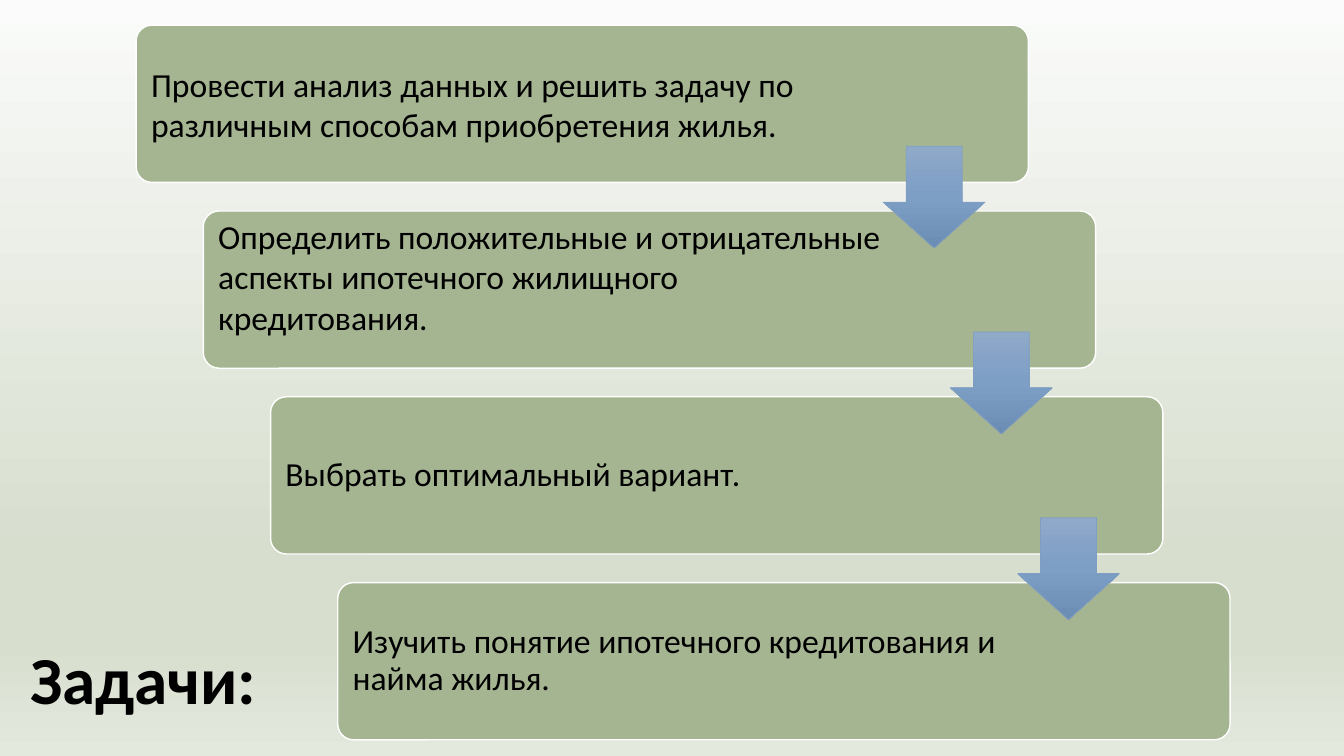
from lxml import etree
from pptx import Presentation
from pptx.dml.color import RGBColor
from pptx.enum.shapes import MSO_SHAPE
from pptx.enum.text import MSO_ANCHOR
from pptx.oxml.ns import qn
from pptx.util import Inches, Pt

ROUND = MSO_SHAPE.ROUNDED_RECTANGLE
ARROW = MSO_SHAPE.DOWN_ARROW
TOP, MIDDLE = MSO_ANCHOR.TOP, MSO_ANCHOR.MIDDLE

BLACK = RGBColor(0x00, 0x00, 0x00)
WHITE = RGBColor(0xFF, 0xFF, 0xFF)
GREEN = RGBColor(0xA5, 0xB5, 0x92)
BLUE = RGBColor(0x80, 0x9E, 0xC2)
PALE = RGBColor(0xFA, 0xFB, 0xFA)
SAGE = RGBColor(0xD7, 0xDE, 0xCE)
MIST = RGBColor(0xE4, 0xE9, 0xDE)
SKY = RGBColor(0x8F, 0xA9, 0xC9)
STEEL = RGBColor(0x7D, 0x9E, 0xC5)
DEEP = RGBColor(0x6B, 0x8C, 0xB3)

BACK_STOPS = [(0, PALE), (74, SAGE), (85, SAGE), (100, MIST)]
ARROW_STOPS = [(0, SKY), (50, STEEL), (100, DEEP)]

# Each task: text, then its format
TASKS = [
    ("Провести анализ данных и решить задачу по различным способам "
     "приобретения жилья.", {}),
    ("Определить положительные и отрицательные аспекты ипотечного "
     "жилищного кредитования.", {"anchor": TOP, "inset": (0.1, 0)}),
    ("Выбрать оптимальный вариант.", {"spacing": 0.9}),
    ("Изучить понятие ипотечного кредитования и найма жилья.",
     {"spacing": 0.9}),
]

# Staircase of cards
LEFT, UP = 1.35, 0.25
STEP_X, STEP_Y = 2 / 3, 5.53 / 3
CARD_W, CARD_H = 8.85, 1.56
PAD = 0.05
ARROW_X, ARROW_Y, ARROW_SIZE = 7.41, 1.2, 1.01


def shade(fill, owner, stops):
    """Fill from top to bottom with any number of colour stops."""
    fill.gradient()
    fill.gradient_angle = 270
    group = next(owner.iter(qn("a:gsLst")))
    for old in list(group):
        group.remove(old)
    for place, color in stops:
        stop = etree.SubElement(group, qn("a:gs"), pos=str(place * 1000))
        etree.SubElement(stop, qn("a:srgbClr"), val=str(color))


def add_text(slide, box, text, size=24, bold=False, anchor=MIDDLE,
             spacing=1.0, inset=(0.1, 0.1)):
    frame = slide.shapes.add_textbox(*map(Inches, box)).text_frame
    frame.word_wrap = True
    frame.vertical_anchor = anchor
    frame.margin_left = frame.margin_right = Inches(inset[0])
    frame.margin_top = frame.margin_bottom = Inches(inset[1])
    para = frame.paragraphs[0]
    para.line_spacing = spacing
    run = para.add_run()
    run.text = text
    run.font.name = "Calibri"
    run.font.size = Pt(size)
    run.font.bold = bold
    run.font.color.rgb = BLACK


def add_form(slide, kind, box, adjust, line, width):
    form = slide.shapes.add_shape(kind, *map(Inches, box))
    form.shadow.inherit = False
    for index, value in enumerate(adjust):
        form.adjustments[index] = value
    form.line.color.rgb = line
    form.line.width = Pt(width)
    return form


def add_card(slide, x, y, text, style):
    card = add_form(slide, ROUND, (x, y, CARD_W, CARD_H), [0.1], WHITE, 1)
    card.fill.solid()
    card.fill.fore_color.rgb = GREEN
    box = (x + PAD, y + PAD, 6.9, CARD_H - 2 * PAD)
    add_text(slide, box, text, **style)


def add_arrow(slide, x, y):
    box = (x, y, ARROW_SIZE, ARROW_SIZE)
    arrow = add_form(slide, ARROW, box, [0.55, 0.45], BLUE, 0.5)
    # The first adjustment is the shaft width, the second the head length
    shade(arrow.fill, arrow.element, ARROW_STOPS)


def main():
    deck = Presentation()
    deck.slide_width, deck.slide_height = Inches(13.33), Inches(7.5)
    slide = deck.slides.add_slide(deck.slide_layouts[6])
    shade(slide.background.fill, slide.element, BACK_STOPS)

    # Heading
    add_text(slide, (0.2, 6.05, 3.62, 1.45), "Задачи:", size=48, bold=True,
             spacing=0.9, inset=(0.1, 0.05))

    # Cards, then the arrows that join them
    spots = [(LEFT + i * STEP_X, UP + i * STEP_Y) for i in range(len(TASKS))]
    for (x, y), (text, style) in zip(spots, TASKS):
        add_card(slide, x, y, text, style)
    for x, y in spots[:-1]:
        add_arrow(slide, x + ARROW_X, y + ARROW_Y)

    deck.save("out.pptx")


if __name__ == "__main__":
    main()
